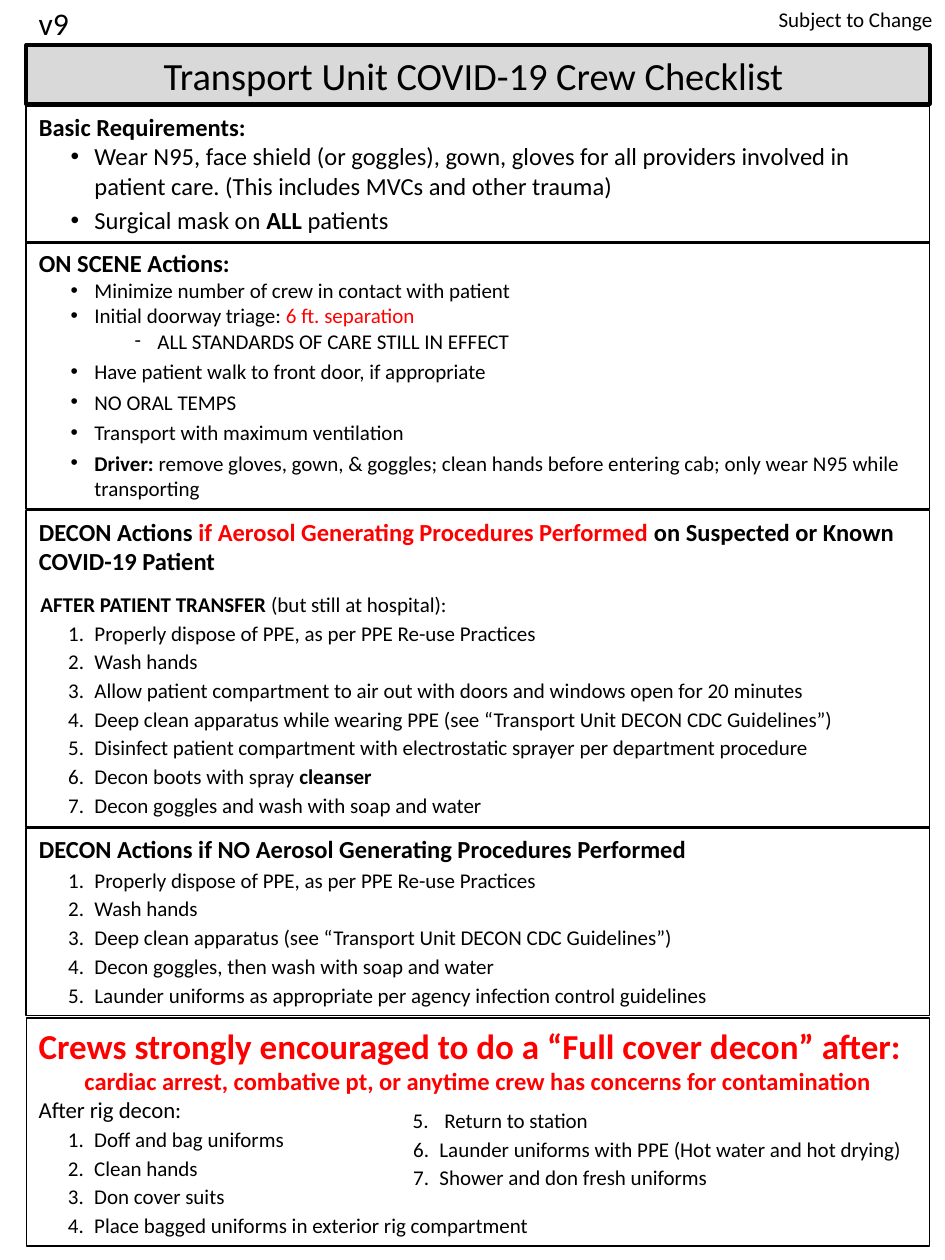
from lxml.etree import SubElement
from pptx import Presentation
from pptx.dml.color import RGBColor
from pptx.enum.text import MSO_ANCHOR, MSO_AUTO_SIZE, PP_ALIGN
from pptx.oxml.ns import qn
from pptx.util import Cm, Pt

FONT = "Calibri"
BLACK, RED, GREY = "000000", "FF0000", "D9D9D9"
LEFT, WIDTH = 0.53, 18.21  # shared by all framed sections, in cm

# List kinds: left margin, first-line indent (cm), level
INDENTS = {
    "•": (1.12, -0.48, 0),
    "-": (2.39, -0.46, 1),
    "1": (1.12, -0.53, 0),
}


def color(hex_value):
    return RGBColor.from_string(hex_value)


def bold(text, hex_value=BLACK):
    return text, True, hex_value


def red(text):
    return text, False, RED


def place(sp, left, top, width, height):
    sp.left, sp.top, sp.width, sp.height = Cm(left), Cm(top), Cm(width), Cm(height)


def frame(sp, top, height, line=1, fill=None):
    """Full-width bordered section."""
    place(sp, LEFT, top, WIDTH, height)
    if fill:
        sp.fill.solid()
        sp.fill.fore_color.rgb = color(fill)
    else:
        sp.fill.background()
    sp.line.color.rgb = color(BLACK)
    sp.line.width = Pt(line)
    tf = sp.text_frame
    tf.word_wrap = True
    tf.auto_size = MSO_AUTO_SIZE.NONE
    tf.vertical_anchor = MSO_ANCHOR.TOP
    return tf


def text_box(s, left, top, width, height, wrap=True):
    tf = s.shapes.add_textbox(Cm(left), Cm(top), Cm(width), Cm(height)).text_frame
    tf.word_wrap = wrap
    return tf


def set_bullet(p, kind, start, indent):
    pPr = p._p.get_or_add_pPr()
    left, first, p.level = INDENTS.get(kind, (0, 0, 0))
    left, first = indent or (left, first)
    pPr.set("marL", str(Cm(left)))
    pPr.set("indent", str(Cm(first)))
    if kind is None:
        SubElement(pPr, qn("a:buNone"))
        return
    SubElement(pPr, qn("a:buFont")).set("typeface", "Arial" if kind == "•" else FONT)
    if kind == "1":
        number = SubElement(pPr, qn("a:buAutoNum"))
        number.set("type", "arabicPeriod")
        if start > 1:
            number.set("startAt", str(start))
    else:
        SubElement(pPr, qn("a:buChar")).set("char", kind)


def add_par(tf, *parts, size=12, kind=None, before=0, align=PP_ALIGN.LEFT,
            start=1, indent=None):
    """Add a paragraph of plain strings and (text, bold, colour) parts."""
    p = tf.paragraphs[0]
    first = not p.runs
    if not first:
        p = tf.add_paragraph()
    set_bullet(p, kind, start, indent)
    p.alignment = align
    p.space_before = Pt(0 if first else before)
    for part in parts:
        text, is_bold, hex_value = (part, False, BLACK) if isinstance(part, str) else part
        r = p.add_run()
        r.text = text
        r.font.name = FONT
        r.font.size = Pt(size)
        r.font.bold = is_bold
        r.font.color.rgb = color(hex_value)


def add_steps(tf, steps, start=1):
    for step in steps:
        parts = step if isinstance(step, list) else [step]
        add_par(tf, *parts, kind="1", before=2, start=start)


def add_header(s):
    tf = text_box(s, LEFT, -0.05, 1.12, 1.02, wrap=False)
    tf.auto_size = MSO_AUTO_SIZE.SHAPE_TO_FIT_TEXT
    add_par(tf, "v9", size=18)
    tf = text_box(s, 14.76, 0, 4.29, 0.76)
    add_par(tf, "Subject to Change", align=PP_ALIGN.RIGHT)
    tf = frame(s.shapes.title, 0.91, 1.19, line=2.25, fill=GREY)
    tf.vertical_anchor = MSO_ANCHOR.MIDDLE
    add_par(tf, "Transport Unit COVID-19 Crew Checklist ", size=22, align=PP_ALIGN.CENTER)


def add_basic(sp):
    tf = frame(sp, 2.13, 2.77)
    add_par(tf, bold("Basic Requirements:"), size=14)
    add_par(tf, "Wear N95, face shield (or goggles), gown, gloves for all providers "
            "involved in patient care. (This includes MVCs and other trauma)",
            size=14, kind="•")
    add_par(tf, "Surgical mask on ", bold("ALL"), " patients", size=14, kind="•", before=3)


def add_on_scene(sp):
    tf = frame(sp, 4.88, 5.38)
    add_par(tf, bold("ON SCENE Actions:"), size=14)
    add_par(tf, "Minimize number of crew in contact with patient", kind="•")
    add_par(tf, "Initial doorway triage: ", red("6 ft. separation"), kind="•")
    add_par(tf, "ALL STANDARDS OF CARE STILL IN EFFECT", kind="-")
    for text in ("Have patient walk to front door, if appropriate",
                 "NO ORAL TEMPS",
                 "Transport with maximum ventilation"):
        add_par(tf, text, kind="•", before=3)
    add_par(tf, bold("Driver: "), "remove gloves, gown, & goggles; clean hands before "
            "entering cab; only wear N95 while transporting", kind="•", before=3)


def add_decon(sp):
    tf = frame(sp, 10.29, 6.38)
    add_par(tf, bold("DECON Actions "),
            bold("if Aerosol Generating Procedures Performed ", RED),
            bold("on Suspected or Known COVID-19 Patient"), size=14)
    add_par(tf, bold("AFTER PATIENT TRANSFER "), "(but still at hospital):",
            before=9, indent=(0.03, 0))
    add_steps(tf, [
        "Properly dispose of PPE, as per PPE Re-use Practices",
        "Wash hands",
        "Allow patient compartment to air out with doors and windows open for 20 minutes",
        "Deep clean apparatus while wearing PPE (see “Transport Unit DECON CDC Guidelines”)",
        "Disinfect patient compartment with electrostatic sprayer per department procedure",
        ["Decon boots with spray ", bold("cleanser")],
        "Decon goggles and wash with soap and water",
    ])


def add_no_aerosol(sp):
    tf = frame(sp, 16.69, 3.78)
    add_par(tf, bold("DECON Actions if NO Aerosol Generating Procedures Performed"), size=14)
    add_steps(tf, [
        "Properly dispose of PPE, as per PPE Re-use Practices",
        "Wash hands",
        "Deep clean apparatus (see “Transport Unit DECON CDC Guidelines”)",
        "Decon goggles, then wash with soap and water",
        "Launder uniforms as appropriate per agency infection control guidelines",
    ])


def add_full_decon(s):
    sp = s.shapes.add_textbox(0, 0, Cm(1), Cm(1))
    tf = frame(sp, 20.52, 4.6, line=0.75)
    add_par(tf, bold("Crews strongly encouraged to do a “Full cover decon” after:", RED), size=20)
    add_par(tf, bold("cardiac arrest, combative pt, or anytime crew has concerns "
                     "for contamination", RED), size=14, align=PP_ALIGN.CENTER)
    add_par(tf, "After rig decon:", size=13)
    add_steps(tf, ["Doff and bag uniforms", "Clean hands", "Don cover suits",
                   "Place bagged uniforms in exterior rig compartment"])
    # Second column of steps
    tf = text_box(s, 7.49, 22.2, 11.02, 2.72)
    add_par(tf, "Return to station", kind="1", start=5, indent=(1.22, -0.64))
    add_steps(tf, ["Launder uniforms with PPE (Hot water and hot drying)",
                   "Shower and don fresh uniforms"], start=5)


def main():
    prs = Presentation()
    prs.slide_width, prs.slide_height = Cm(19.05), Cm(25.4)
    s = prs.slides.add_slide(prs.slide_layouts.get_by_name("Comparison"))
    add_header(s)
    # One body placeholder per checklist section
    sections = (add_basic, add_on_scene, add_decon, add_no_aerosol)
    for idx, add_section in enumerate(sections, start=1):
        body = next(sp for sp in s.placeholders if sp.placeholder_format.idx == idx)
        add_section(body)
    add_full_decon(s)
    prs.save("out.pptx")


if __name__ == "__main__":
    main()
